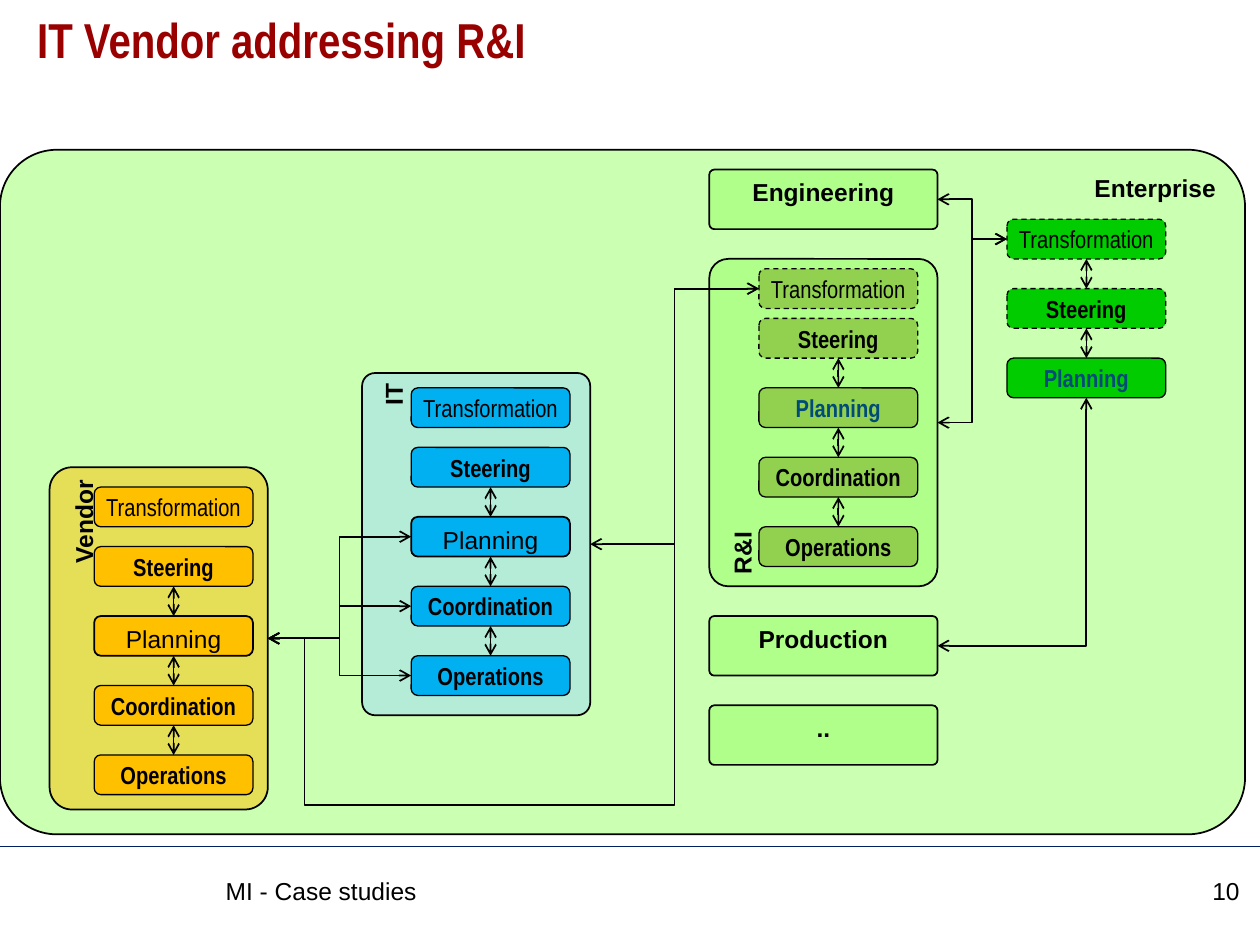
import itertools
from dataclasses import dataclass

import lxml.etree
import pptx
import pptx.dml.color
import pptx.enum.dml
import pptx.enum.shapes
import pptx.enum.text
import pptx.oxml.ns
import pptx.util

Cm = pptx.util.Cm
Pt = pptx.util.Pt
Align = pptx.enum.text.PP_ALIGN
Anchor = pptx.enum.text.MSO_ANCHOR
Link = pptx.enum.shapes.MSO_CONNECTOR
qn = pptx.oxml.ns.qn

BLACK = "000000"
TOP, LEFT, BOTTOM, RIGHT = range(4)
BOX_W, BOX_H, STEP = 3.2, 0.8, 1.4
INSET = (0.25, 0.13)


@dataclass
class Panel:
    name: str
    x: float
    y: float
    w: float
    h: float
    fill: str = "99FF66"
    radius: float = 0.083
    align: Align = Align.CENTER
    upright: bool = False


@dataclass
class Stage:
    name: str
    font: str = "Arial Narrow"
    bold: bool = True
    color: str = BLACK
    dashed: bool = False


@dataclass
class Column:
    name: str
    x: float
    tops: list[float]
    fill: str
    stages: list[Stage]
    first_link: int = 1


PANELS = [
    Panel("Enterprise", 0, 3.02, 25.1, 13.8, align=Align.RIGHT),
    Panel("R&I", 14.3, 5.22, 4.6, 6.6, align=Align.LEFT, upright=True),
    Panel("IT", 7.3, 7.52, 4.6, 6.9, "9EDBFF", 0.057, Align.RIGHT, True),
    Panel("Vendor", 1, 9.42, 4.4, 6.9, "FFC000", 0.103, Align.RIGHT, True),
    Panel("Engineering", 14.3, 3.42, 4.6, 1.2),
    Panel("Production", 14.3, 12.42, 4.6, 1.2),
    Panel("..", 14.3, 14.22, 4.6, 1.2),
]

LOWER = [Stage("Coordination"), Stage("Operations")]
OPEN_TOP = [Stage("Transformation", bold=False, dashed=True), Stage("Steering", dashed=True)]
BLUE_PLAN = Stage("Planning", color="004B78")
FULL = [Stage("Transformation", bold=False), Stage("Steering"),
        Stage("Planning", "Arial", False), *LOWER]


def tops(first: float, second: float, count: int) -> list[float]:
    return [first] + [second + STEP * i for i in range(count - 1)]


COLUMNS = [
    Column("IT", 8.29, tops(7.82, 9.02, 5), "00B0F0", FULL),
    Column("R&I", 15.3, tops(5.42, 6.42, 5), "92D050", [*OPEN_TOP, BLUE_PLAN, *LOWER]),
    Column("Enterprise", 20.3, tops(4.42, 5.82, 3), "00CC00", [*OPEN_TOP, BLUE_PLAN], 0),
    Column("Vendor", 1.9, tops(9.82, 11.02, 5), "FFC000", FULL),
]


def rgb(value: str) -> pptx.dml.color.RGBColor:
    return pptx.dml.color.RGBColor.from_string(value)


def write(s, text: str, size: float = 14, font: str = "Arial", color: str = BLACK,
          bold: bool = False, align: Align = Align.LEFT, anchor: Anchor = Anchor.TOP,
          inset: tuple[float, float] = INSET, wrap: bool = True):
    tf = s.text_frame
    tf.word_wrap = wrap
    tf.vertical_anchor = anchor
    tf.margin_left = tf.margin_right = Cm(inset[0])
    tf.margin_top = tf.margin_bottom = Cm(inset[1])
    p = tf.paragraphs[0]
    p.alignment = align
    r = p.add_run()
    r.text = text
    r.font.size = Pt(size)
    r.font.name = font
    r.font.bold = bold
    r.font.color.rgb = rgb(color)
    return p


def text_box(shapes, x: float, y: float, w: float, h: float, text: str, **style):
    return write(shapes.add_textbox(Cm(x), Cm(y), Cm(w), Cm(h)), text, **style)


def round_box(shapes, x: float, y: float, w: float, h: float, fill: str,
              radius: float, weight: float):
    kind = pptx.enum.shapes.MSO_SHAPE.ROUNDED_RECTANGLE
    s = shapes.add_shape(kind, Cm(x), Cm(y), Cm(w), Cm(h))
    s.shadow.inherit = False
    s.adjustments[0] = radius
    s.fill.solid()
    s.fill.fore_color.rgb = rgb(fill)
    s.line.color.rgb = rgb(BLACK)
    s.line.width = Pt(weight)
    return s


def draw_panel(shapes, panel: Panel):
    s = round_box(shapes, panel.x, panel.y, panel.w, panel.h, panel.fill, panel.radius, 1)
    color = s.fill._xPr.find(qn("a:solidFill"))[0]
    lxml.etree.SubElement(color, qn("a:alpha")).set("val", "50000")
    write(s, panel.name, bold=True, align=panel.align, wrap=False)
    if panel.upright:
        s.text_frame._txBody.bodyPr.set("vert", "vert270")
    return s


def draw_stage(shapes, column: Column, stage: Stage, y: float):
    roomy = stage.font == "Arial"
    s = round_box(shapes, column.x, y, BOX_W, BOX_H, column.fill, 0.167, 1 if roomy else 0.75)
    if stage.dashed:
        s.line.dash_style = pptx.enum.dml.MSO_LINE.DASH
    write(s, stage.name, font=stage.font, color=stage.color, bold=stage.bold,
          align=Align.CENTER, anchor=Anchor.TOP if roomy else Anchor.MIDDLE,
          inset=INSET if roomy else (0, 0))
    return s


def connect(shapes, begin, end, kind: Link = Link.ELBOW, weight: float = 1,
            arrows: tuple[str, ...] = ("headEnd", "tailEnd"), color: str = BLACK):
    c = shapes.add_connector(kind, 0, 0, 0, 0)
    if isinstance(begin[0], float):
        c.begin_x, c.begin_y = Cm(begin[0]), Cm(begin[1])
    else:
        c.begin_connect(*begin)
    if isinstance(end[0], float):
        c.end_x, c.end_y = Cm(end[0]), Cm(end[1])
    else:
        c.end_connect(*end)
    c.line.color.rgb = rgb(color)
    c.line.width = Pt(weight)
    sp_pr = c._element.spPr
    for arrow in arrows:
        lxml.etree.SubElement(sp_pr.find(qn("a:ln")), qn(f"a:{arrow}")).set("type", "arrow")
    lxml.etree.SubElement(sp_pr, qn("a:effectLst"))
    return c


def main():
    prs = pptx.Presentation()
    prs.slide_width, prs.slide_height = Cm(25.4), Cm(19.05)
    shapes = prs.slides.add_slide(prs.slide_layouts[6]).shapes

    connect(shapes, (0.0, 17.07), (25.4, 17.07), Link.STRAIGHT, 0.75, (), "002060")
    panels = {panel.name: draw_panel(shapes, panel) for panel in PANELS}
    title = text_box(shapes, 0.5, 0.2, 24.4, 2.1, "IT Vendor addressing R&I",
                     size=28, font="Arial Narrow", color="990000", bold=True)
    title.line_spacing = 0.9

    boxes = {}
    for column in COLUMNS:
        stack = [draw_stage(shapes, column, stage, y)
                 for stage, y in zip(column.stages, column.tops)]
        for upper, lower in itertools.pairwise(stack[column.first_link:]):
            connect(shapes, (upper, BOTTOM), (lower, TOP), Link.STRAIGHT)
        boxes.update({(column.name, stage.name): s
                      for stage, s in zip(column.stages, stack)})

    research = boxes["R&I", "Transformation"]
    vendor = (panels["Vendor"], RIGHT)
    for name in ("R&I", "Engineering"):
        connect(shapes, (boxes["Enterprise", "Transformation"], LEFT), (panels[name], RIGHT))
    connect(shapes, (research, LEFT), (panels["IT"], RIGHT))
    for name in ("Planning", "Coordination", "Operations"):
        connect(shapes, (boxes["IT", name], LEFT), vendor)

    production = connect(shapes, (panels["Production"], RIGHT),
                         (boxes["Enterprise", "Planning"], BOTTOM))
    production._element.spPr.find(qn("a:prstGeom")).set("prst", "bentConnector2")

    west, east = (6.89, 16.23), (11.91, 16.23)
    connect(shapes, west, vendor, weight=0.75, arrows=("tailEnd",))
    connect(shapes, west, east, Link.STRAIGHT, 0.75, ())
    connect(shapes, east, (research, LEFT), weight=0.75, arrows=("tailEnd",))

    text_box(shapes, 22.9, 17.52, 2.34, 1.15, "10", align=Align.RIGHT)
    text_box(shapes, 4.3, 17.52, 18.3, 1.15, "MI - Case studies")
    prs.save("out.pptx")


if __name__ == "__main__":
    main()
